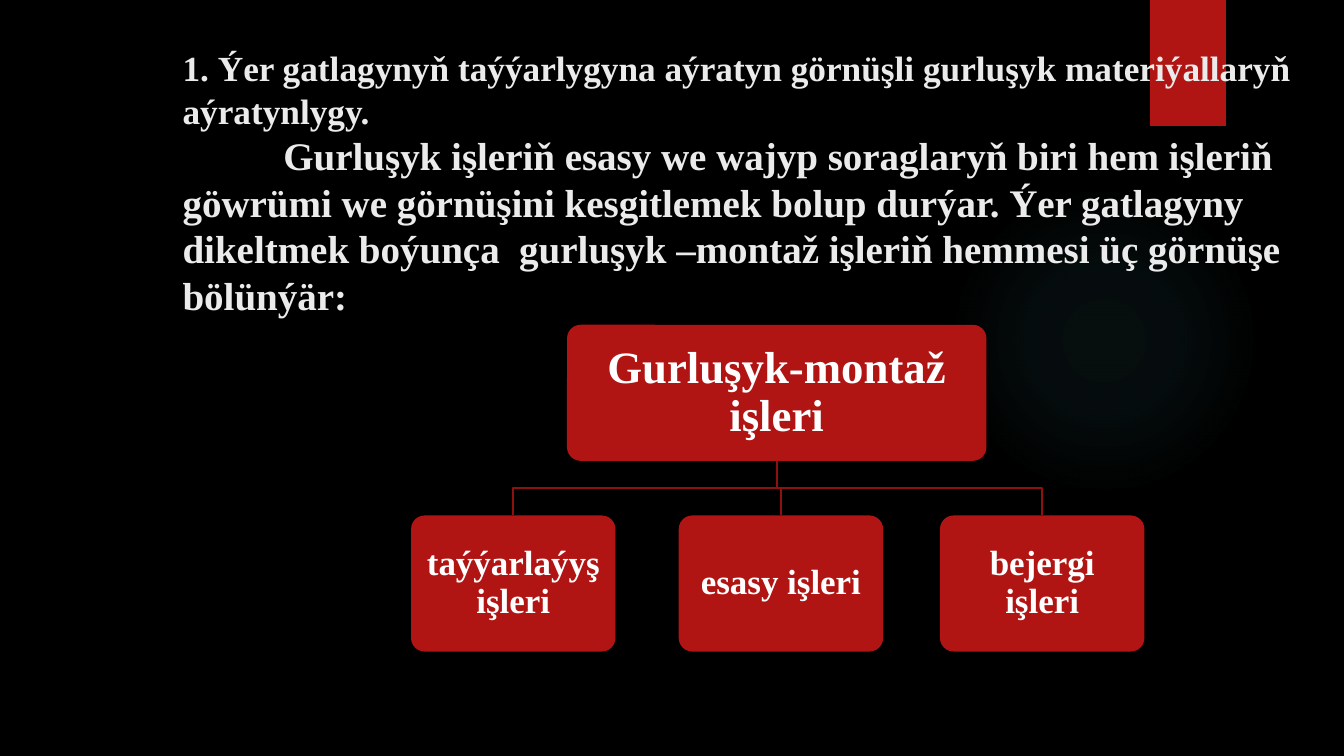
from dataclasses import dataclass

from lxml import etree
from pptx import Presentation
from pptx.dml.color import RGBColor
from pptx.enum import shapes, text
from pptx.oxml import parse_xml
from pptx.util import Pt

NS = "http://schemas.openxmlformats.org/drawingml/2006/main"


@dataclass(frozen=True)
class Theme:
    font: str = "Times New Roman"
    background: str = "000000"
    red: str = "B01513"
    line: str = "8D110F"
    glow: str = "50B9C1"
    title: str = "EBEBEB"
    label: str = "FFFFFF"
    heading_size: float = 25.2
    body_size: float = 27.9
    root_size: float = 32
    branch_size: float = 25


@dataclass(frozen=True)
class Box:
    label: str
    left: float
    top: float
    width: float
    height: float
    size: float
    inset: float

    @property
    def center(self) -> float:
        return self.left + self.width / 2


THEME = Theme()
ROOT = Box("Gurluşyk-montaž işleri", 405, 232, 299.6, 97.2, THEME.root_size, 12)
BRANCHES = [
    Box(label, left, 368.2, 146, 97.2, THEME.branch_size, 7)
    for label, left in (
        ("taýýarlaýyş işleri", 293.6),
        ("esasy işleri", 484.8),
        ("bejergi işleri", 671.4),
    )
]
HEADING = ("1. Ýer gatlagynyň taýýarlygyna aýratyn görnüşli gurluşyk "
           "materiýallaryň aýratynlygy.")
BODY = ("Gurluşyk işleriň esasy we wajyp soraglaryň biri hem işleriň göwrümi we "
        "görnüşini kesgitlemek bolup durýar. Ýer gatlagyny dikeltmek boýunça  "
        "gurluşyk –montaž işleriň hemmesi üç görnüşe bölünýär:")


def rgb(value: str) -> RGBColor:
    return RGBColor.from_string(value)


def write(p, content: str, *, size: float, color: str, spacing: float = 1.0,
          align=text.PP_ALIGN.LEFT, indent: float = 0) -> None:
    """Fill a paragraph with one bold run."""
    p.alignment = align
    p.line_spacing = spacing
    p.space_before = p.space_after = Pt(0)
    if indent:
        p._p.get_or_add_pPr().set("indent", str(Pt(indent)))
    r = p.add_run()
    r.text = content
    r.font.name = THEME.font
    r.font.size = Pt(size)
    r.font.bold = True
    r.font.color.rgb = rgb(color)


def set_insets(tf, side: float, top: float) -> None:
    tf.margin_left = tf.margin_right = Pt(side)
    tf.margin_top = tf.margin_bottom = Pt(top)


def add_plain_shape(slide, kind, left: float, top: float, width: float, height: float):
    sp = slide.shapes.add_shape(kind, Pt(left), Pt(top), Pt(width), Pt(height))
    sp.shadow.inherit = False
    sp.fill.solid()
    sp.fill.fore_color.rgb = rgb(THEME.red)
    sp.line.fill.background()
    return sp


def add_glow(slide) -> None:
    sp = add_plain_shape(slide, shapes.MSO_SHAPE.OVAL, 677.5, 131.8, 221.8, 221.8)
    stops = "".join(
        f'<a:gs pos="{pos * 1000}"><a:srgbClr val="{THEME.glow}">'
        f'<a:alpha val="{alpha * 1000}"/></a:srgbClr></a:gs>'
        for pos, alpha in ((0, 7), (36, 6), (69, 0))
    )
    gradient = parse_xml(
        f'<a:gradFill xmlns:a="{NS}"><a:gsLst>{stops}</a:gsLst><a:path path="circle">'
        '<a:fillToRect l="50000" t="50000" r="50000" b="50000"/></a:path></a:gradFill>'
    )
    solid = sp.element.spPr.find(f"{{{NS}}}solidFill")
    solid.getparent().replace(solid, gradient)


def add_ribbon(slide) -> None:
    sp = add_plain_shape(slide, shapes.MSO_SHAPE.RECTANGLE, 821.6, 0, 54, 90)
    effects = sp.element.spPr.find(f"{{{NS}}}effectLst")
    shadow = etree.SubElement(effects, f"{{{NS}}}outerShdw", blurRad=str(Pt(3)),
                              dist=str(Pt(2)), dir="5400000", rotWithShape="0")
    color = etree.SubElement(shadow, f"{{{NS}}}srgbClr", val="000000")
    etree.SubElement(color, f"{{{NS}}}alpha", val="45000")


def add_title(slide) -> None:
    title = slide.shapes.title
    title.left, title.top, title.width, title.height = map(Pt, (123.2, 29.6, 823, 196.6))
    title.element.getparent().append(title.element)  # in front of the ribbon
    tf = title.text_frame
    tf.word_wrap = True
    tf.auto_size = text.MSO_AUTO_SIZE.NONE
    tf.vertical_anchor = text.MSO_ANCHOR.TOP
    set_insets(tf, 7.2, 3.6)
    write(tf.paragraphs[0], HEADING, size=THEME.heading_size, color=THEME.title)
    write(tf.add_paragraph(), BODY, size=THEME.body_size, color=THEME.title, indent=72)


def add_branch_line(slide, parent: Box, child: Box) -> None:
    bottom = parent.top + parent.height
    middle = (bottom + child.top) / 2
    points = [(parent.center, middle), (child.center, middle), (child.center, child.top)]
    builder = slide.shapes.build_freeform(Pt(parent.center), Pt(bottom))
    builder.add_line_segments([(Pt(x), Pt(y)) for x, y in points], close=False)
    sp = builder.convert_to_shape()
    sp.shadow.inherit = False
    sp.fill.background()
    sp.line.color.rgb = rgb(THEME.line)
    sp.line.width = Pt(1.5)


def add_box(slide, box: Box) -> None:
    sp = add_plain_shape(slide, shapes.MSO_SHAPE.ROUNDED_RECTANGLE,
                         box.left, box.top, box.width, box.height)
    sp.adjustments[0] = 0.1
    tf = sp.text_frame
    tf.word_wrap = True
    tf.vertical_anchor = text.MSO_ANCHOR.MIDDLE
    set_insets(tf, box.inset, box.inset)
    write(tf.paragraphs[0], box.label, size=box.size, color=THEME.label,
          spacing=0.9, align=text.PP_ALIGN.CENTER)


def main() -> None:
    prs = Presentation()
    prs.slide_width, prs.slide_height = Pt(960), Pt(540)
    slide = prs.slides.add_slide(prs.slide_layouts.get_by_name("Title Only"))
    slide.background.fill.solid()
    slide.background.fill.fore_color.rgb = rgb(THEME.background)
    add_glow(slide)
    add_ribbon(slide)
    add_title(slide)
    for branch in BRANCHES:
        add_branch_line(slide, ROOT, branch)
    for box in (ROOT, *BRANCHES):
        add_box(slide, box)
    prs.save("out.pptx")


if __name__ == "__main__":
    main()
